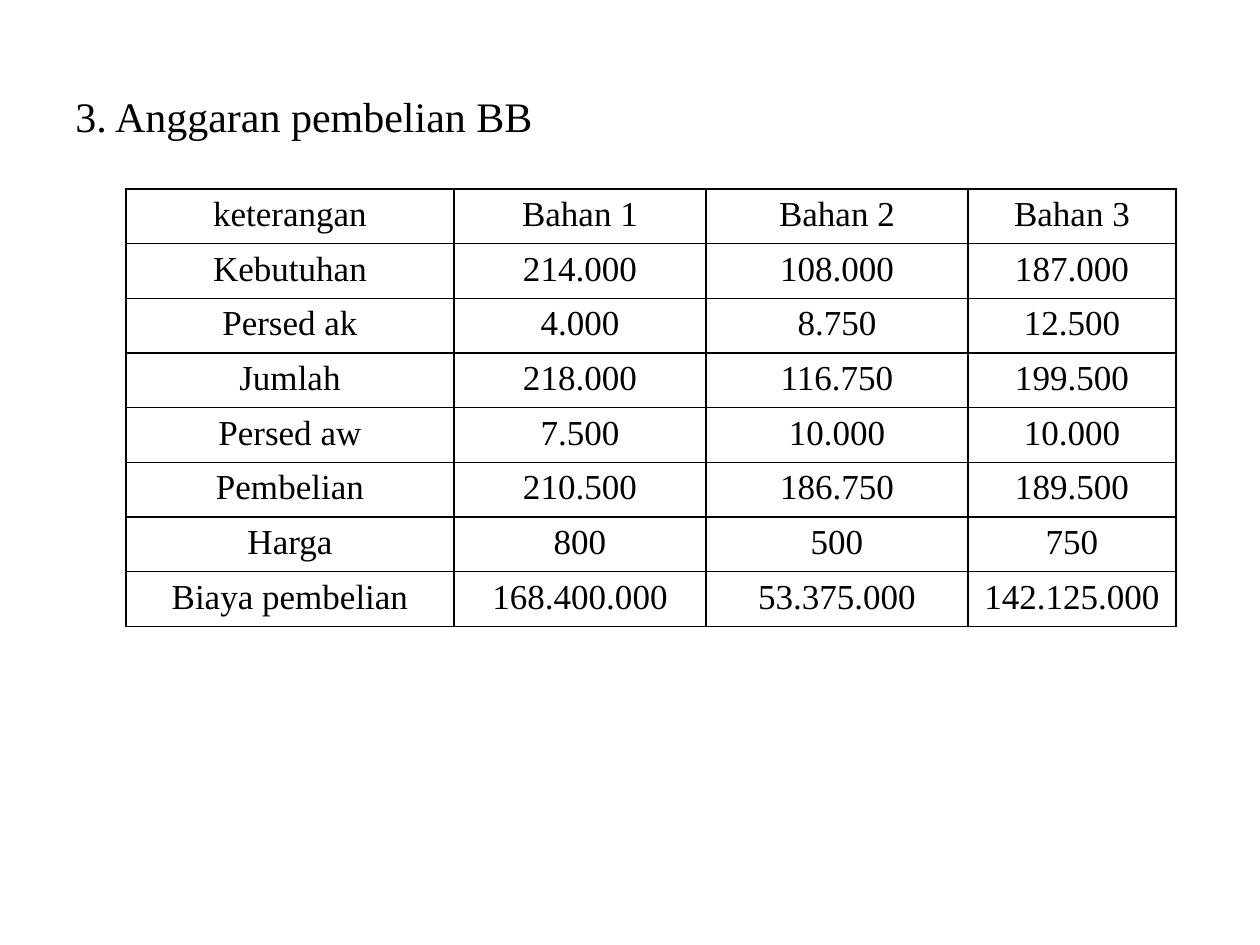
from dataclasses import dataclass

import pptx
import pptx.dml.color
import pptx.enum.text
import pptx.oxml
import pptx.oxml.ns
import pptx.util

EMU_PER_PX = 914400 / 126


@dataclass(frozen=True)
class Theme:
    font: str = "Times New Roman"
    ink: str = "000000"
    title_size: int = 24
    table_size: int = 20
    border_width: int = 1


THEME = Theme()
TITLE = "3. Anggaran pembelian BB"
COLUMN_WIDTHS = (328, 252, 262, 208)
TABLE_HEIGHT = 412
BUDGET_ROWS = (
    ("keterangan", "Bahan 1", "Bahan 2", "Bahan 3"),
    ("Kebutuhan", "214.000", "108.000", "187.000"),
    ("Persed ak", "4.000", "8.750", "12.500"),
    ("Jumlah", "218.000", "116.750", "199.500"),
    ("Persed aw", "7.500", "10.000", "10.000"),
    ("Pembelian", "210.500", "186.750", "189.500"),
    ("Harga", "800", "500", "750"),
    ("Biaya pembelian", "168.400.000", "53.375.000", "142.125.000"),
)


def px(length):
    return pptx.util.Emu(round(length * EMU_PER_PX))


def write_text(text_frame, text, *, size, align="LEFT", space_before=0):
    paragraph = text_frame.paragraphs[0]
    paragraph.alignment = pptx.enum.text.PP_ALIGN[align]
    paragraph.space_before = pptx.util.Pt(space_before)
    run = paragraph.add_run()
    run.text = text
    run.font.name = THEME.font
    run.font.size = pptx.util.Pt(size)
    run.font.color.rgb = pptx.dml.color.RGBColor.from_string(THEME.ink)
    return paragraph


def add_title(slide):
    box = slide.shapes.add_textbox(px(63), px(84), px(1134), px(760))
    box.text_frame.word_wrap = True
    paragraph = write_text(box.text_frame, TITLE, size=THEME.title_size, space_before=4)
    properties = paragraph._p.get_or_add_pPr()
    properties.set("marL", str(px(47)))
    properties.set("indent", str(px(-47)))


def add_cell_borders(cell):
    """Draw all four sides; the lines must come before the cell's fill."""
    properties = cell._tc.get_or_add_tcPr()
    width = pptx.util.Pt(THEME.border_width)
    for position, side in enumerate(("lnL", "lnR", "lnT", "lnB")):
        line = pptx.oxml.parse_xml(
            f'<a:{side} {pptx.oxml.ns.nsdecls("a")} w="{width}">'
            f'<a:solidFill><a:srgbClr val="{THEME.ink}"/></a:solidFill></a:{side}>'
        )
        properties.insert(position, line)


def add_budget_table(slide):
    row_count, column_count = len(BUDGET_ROWS), len(COLUMN_WIDTHS)
    frame = slide.shapes.add_table(
        row_count, column_count, px(126), px(189), px(sum(COLUMN_WIDTHS)), px(TABLE_HEIGHT)
    )
    table = frame.table
    table.first_row = False
    table.horz_banding = False
    for column, width in zip(table.columns, COLUMN_WIDTHS):
        column.width = px(width)
    for row, values in zip(table.rows, BUDGET_ROWS):
        row.height = px(TABLE_HEIGHT / row_count)
        for cell, value in zip(row.cells, values):
            cell.fill.background()
            add_cell_borders(cell)
            write_text(cell.text_frame, value, size=THEME.table_size, align="CENTER")


def main():
    presentation = pptx.Presentation()
    presentation.slide_width = px(1260)
    presentation.slide_height = px(945)
    slide = presentation.slides.add_slide(presentation.slide_layouts[6])
    add_title(slide)
    add_budget_table(slide)
    presentation.save("out.pptx")


if __name__ == "__main__":
    main()
